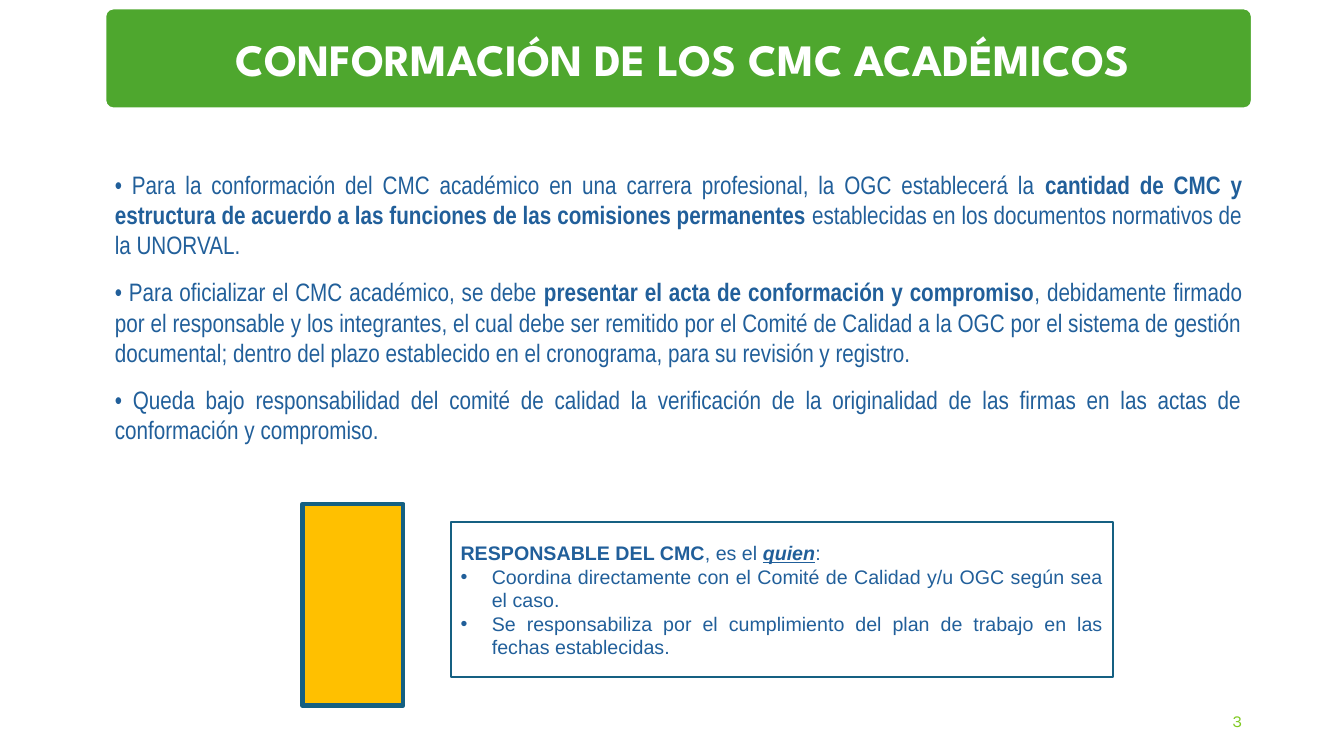
from lxml import etree
from pptx import Presentation
from pptx.dml.color import RGBColor
from pptx.enum.shapes import MSO_SHAPE
from pptx.enum.text import MSO_ANCHOR, PP_ALIGN
from pptx.oxml.ns import qn
from pptx.util import Inches, Pt

LEFT, CENTER, RIGHT, JUSTIFY = PP_ALIGN.LEFT, PP_ALIGN.CENTER, PP_ALIGN.RIGHT, PP_ALIGN.JUSTIFY
TOP, MIDDLE = MSO_ANCHOR.TOP, MSO_ANCHOR.MIDDLE
RECTANGLE, ROUNDED = MSO_SHAPE.RECTANGLE, MSO_SHAPE.ROUNDED_RECTANGLE

GREEN = RGBColor(0x4E, 0xA7, 0x2E)
LIME = RGBColor(0x7F, 0xCA, 0x20)
BLUE = RGBColor(0x21, 0x5F, 0x9A)
TEAL = RGBColor(0x15, 0x60, 0x82)
AMBER = RGBColor(0xFF, 0xC0, 0x00)
WHITE = RGBColor(0xFF, 0xFF, 0xFF)

# Content: a paragraph is a list of (text, style) runs; b, i, u are the styles
TITLE = [[("CONFORMACIÓN DE LOS CMC ACADÉMICOS", "b")]]
PAGE_NUMBER = [[("3", "")]]
RULES = [
    [("• Para la conformación del CMC académico en una carrera profesional, la OGC establecerá la ", ""),
     ("cantidad de CMC y estructura de acuerdo a las funciones de las comisiones permanentes ", "b"),
     ("establecidas en los documentos normativos de la UNORVAL.", "")],
    [("• Para oficializar el CMC académico, se debe ", ""),
     ("presentar el acta de conformación y compromiso", "b"),
     (", debidamente firmado por el responsable y los integrantes, el cual debe ser remitido por el "
      "Comité de Calidad a la OGC por el sistema de gestión documental; dentro del plazo establecido "
      "en el cronograma, para su revisión y registro.", "")],
    [("• Queda bajo responsabilidad del comité de calidad la verificación de la originalidad de las "
      "firmas en las actas de conformación y compromiso.", "")],
]
MANAGER = [
    [("RESPONSABLE DEL CMC", "b"), (", es el ", ""), ("quien", "biu"), (":", "")],
    [("Coordina directamente con el Comité de Calidad y/u OGC según sea el caso.", "")],
    [("Se responsabiliza por el cumplimiento del plan de trabajo en las fechas establecidas.", "")],
]

# Outline of the person, in inches, counterclockwise from the top of the head
PERSON = [
    (3.6, 5.18), (3.55, 5.19), (3.51, 5.2), (3.48, 5.23), (3.46, 5.25), (3.4, 5.27),
    (3.35, 5.3), (3.32, 5.34), (3.3, 5.4), (3.28, 5.45), (3.27, 5.5), (3.27, 5.56),
    (3.28, 5.61), (3.26, 5.62), (3.25, 5.65), (3.24, 5.69), (3.24, 5.74), (3.25, 5.79),
    (3.27, 5.83), (3.29, 5.86), (3.31, 5.86), (3.34, 5.93), (3.38, 6), (3.43, 6.05),
    (3.48, 6.1), (3.48, 6.2), (3.39, 6.21), (3.3, 6.24), (3.22, 6.27), (3.14, 6.32),
    (3.08, 6.37), (3.03, 6.43), (3, 6.5), (2.98, 6.58), (2.98, 6.63), (3.01, 6.64),
    (3.08, 6.67), (3.16, 6.69), (3.27, 6.7), (3.41, 6.71), (3.6, 6.72), (3.79, 6.71),
    (3.93, 6.7), (4.04, 6.69), (4.12, 6.67), (4.18, 6.65), (4.22, 6.63), (4.23, 6.58),
    (4.21, 6.5), (4.18, 6.42), (4.13, 6.36), (4.06, 6.31), (3.99, 6.27), (3.9, 6.23),
    (3.8, 6.21), (3.72, 6.2), (3.72, 6.1), (3.77, 6.05), (3.82, 6), (3.86, 5.93),
    (3.89, 5.86), (3.91, 5.86), (3.93, 5.84), (3.95, 5.81), (3.96, 5.76), (3.96, 5.69),
    (3.95, 5.64), (3.93, 5.61), (3.94, 5.54), (3.94, 5.48), (3.93, 5.43), (3.91, 5.36),
    (3.88, 5.3), (3.86, 5.27), (3.8, 5.23), (3.74, 5.2), (3.68, 5.18), (3.63, 5.18),
]


def paint(shape, fill, line, width):
    shape.shadow.inherit = False
    shape.fill.solid()
    shape.fill.fore_color.rgb = fill
    shape.line.color.rgb = line
    shape.line.width = Pt(width)


def add_bullet(paragraph, indent):
    properties = paragraph._p.get_or_add_pPr()
    properties.set("marL", str(Inches(indent)))
    properties.set("indent", str(-Inches(indent)))
    etree.SubElement(properties, qn("a:buFont")).set("typeface", "Arial")
    etree.SubElement(properties, qn("a:buChar")).set("char", "•")


def write(shape, paragraphs, *, font, size, color, align=LEFT, anchor=TOP, after=0, bullets_from=None):
    frame = shape.text_frame
    frame.word_wrap = True
    frame.vertical_anchor = anchor
    for index, runs in enumerate(paragraphs):
        paragraph = frame.paragraphs[0] if index == 0 else frame.add_paragraph()
        paragraph.alignment = align
        paragraph.space_after = Pt(after)
        if bullets_from is not None and index >= bullets_from:
            add_bullet(paragraph, 0.31)
        for text, style in runs:
            run = paragraph.add_run()
            run.text = text
            run.font.name = font
            run.font.size = Pt(size)
            run.font.color.rgb = color
            run.font.bold = "b" in style
            run.font.italic = "i" in style
            run.font.underline = "u" in style


def box(left, top, width, height):
    return [Inches(length) for length in (left, top, width, height)]


presentation = Presentation()
presentation.slide_width = Inches(13.33)
presentation.slide_height = Inches(7.5)
slide = presentation.slides.add_slide(presentation.slide_layouts[6])
shapes = slide.shapes

# Title banner
banner = shapes.add_shape(ROUNDED, *box(1.04, 0.08, 11.38, 1))
banner.adjustments[0] = 0.082
paint(banner, GREEN, WHITE, 2)
write(shapes.add_textbox(*box(1.26, 0.27, 11.03, 0.64)), TITLE,
      font="League Spartan", size=32, color=WHITE, align=CENTER)

# Rules
write(shapes.add_textbox(*box(1.04, 1.63, 11.38, 2.86)), RULES,
      font="Arial Narrow", size=18, color=BLUE, align=JUSTIFY, after=12)

# Person in charge
builder = shapes.build_freeform(*PERSON[0], scale=Inches(1))
builder.add_line_segments(PERSON[1:], close=True)
paint(builder.convert_to_shape(), AMBER, TEAL, 3)

manager = shapes.add_shape(RECTANGLE, *box(4.47, 5.18, 6.57, 1.54))
paint(manager, WHITE, TEAL, 1.5)
write(manager, MANAGER, font="Arial", size=14, color=BLUE,
      align=JUSTIFY, anchor=MIDDLE, bullets_from=1)

# Page number
write(shapes.add_textbox(*box(9.42, 6.95, 3, 0.4)), PAGE_NUMBER,
      font="Karla", size=12, color=LIME, align=RIGHT, anchor=MIDDLE)

presentation.save("out.pptx")
